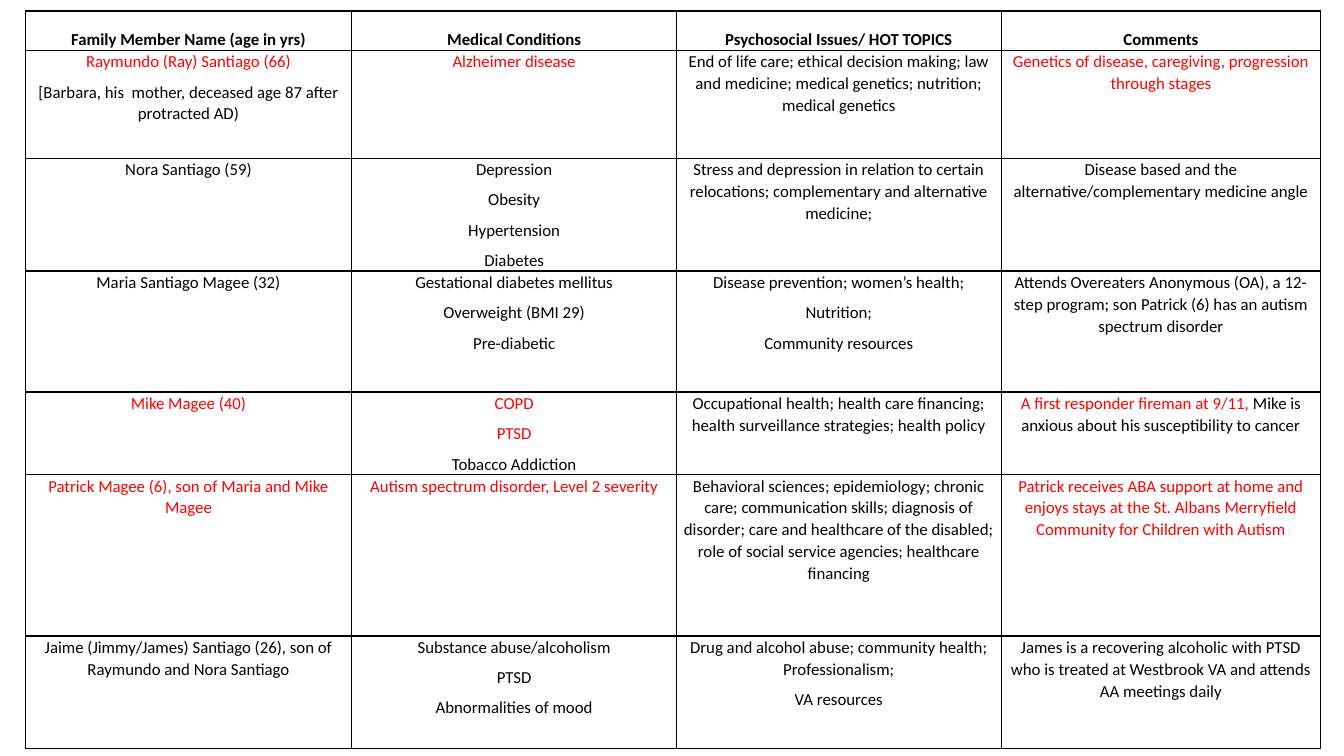
import pptx
import pptx.dml.color
import pptx.enum.text
import pptx.oxml
import pptx.oxml.ns
import pptx.util
import lxml.etree

Inches = pptx.util.Inches
BLACK = "000000"
RED = "FF0000"
WHITE = "FFFFFF"
COLUMN_WIDTHS = [3.24, 3.22, 3.22, 3.17]
ROW_HEIGHTS = [0.39, 1.07, 1.12, 1.2, 0.82, 1.6, 1.12]


def red(text):
    return [(text, RED)]


HEADINGS = [
    "Family Member Name (age in yrs)",
    "Medical Conditions",
    "Psychosocial Issues/ HOT TOPICS",
    "Comments",
]
FAMILY_MEMBERS = [
    [
        [red("Raymundo (Ray) Santiago (66)"),
         "[Barbara, his  mother, deceased age 87 after protracted AD)"],
        [red("Alzheimer disease")],
        ["End of life care; ethical decision making; law and medicine; "
         "medical genetics; nutrition; medical genetics"],
        [red("Genetics of disease, caregiving, progression through stages")],
    ],
    [
        ["Nora Santiago (59)"],
        ["Depression", "Obesity", "Hypertension", "Diabetes"],
        ["Stress and depression in relation to certain relocations; "
         "complementary and alternative medicine;"],
        ["Disease based and the alternative/complementary medicine angle"],
    ],
    [
        ["Maria Santiago Magee (32)"],
        ["Gestational diabetes mellitus", "Overweight (BMI 29)", "Pre-diabetic"],
        ["Disease prevention; women’s health;", "Nutrition;", "Community resources"],
        ["Attends Overeaters Anonymous (OA), a 12-step program; "
         "son Patrick (6) has an autism spectrum disorder"],
    ],
    [
        [red("Mike Magee (40)")],
        [red("COPD"), red("PTSD"), "Tobacco Addiction"],
        ["Occupational health; health care financing; "
         "health surveillance strategies; health policy"],
        [[("A first responder fireman at 9/11,", RED),
          (" Mike is anxious about his susceptibility to cancer", BLACK)]],
    ],
    [
        [red("Patrick Magee (6), son of Maria and Mike Magee")],
        [red("Autism spectrum disorder, Level 2 severity")],
        ["Behavioral sciences; epidemiology; chronic care; communication skills; "
         "diagnosis of disorder; care and healthcare of the disabled; "
         "role of social service agencies; healthcare financing"],
        [red("Patrick receives ABA support at home and enjoys stays at the "
             "St. Albans Merryfield Community for Children with Autism")],
    ],
    [
        ["Jaime (Jimmy/James) Santiago (26), son of Raymundo and Nora Santiago"],
        ["Substance abuse/alcoholism", "PTSD", "Abnormalities of mood"],
        ["Drug and alcohol abuse; community health; Professionalism;", "VA resources"],
        ["James is a recovering alcoholic with PTSD who is treated at "
         "Westbrook VA and attends AA meetings daily"],
    ],
]


def color(value):
    return pptx.dml.color.RGBColor.from_string(value)


def add_borders(cell):
    properties = cell._tc.get_or_add_tcPr()
    for index, side in enumerate(["lnL", "lnR", "lnT", "lnB"]):
        line = pptx.oxml.parse_xml(
            f'<a:{side} {pptx.oxml.ns.nsdecls("a")} w="12700">'
            f'<a:solidFill><a:srgbClr val="{BLACK}"/></a:solidFill></a:{side}>')
        properties.insert(index, line)


def write_paragraph(paragraph, content, bold):
    paragraph.alignment = pptx.enum.text.PP_ALIGN.CENTER
    paragraph.line_spacing = 1.07
    paragraph.space_before = pptx.util.Pt(6)
    runs = [(content, BLACK)] if isinstance(content, str) else content
    for text, text_color in runs:
        run = paragraph.add_run()
        run.text = text
        run.font.name = "Calibri"
        run.font.size = pptx.util.Pt(12)
        run.font.bold = bold
        run.font.color.rgb = color(text_color)


def fill_cell(cell, paragraphs, heading):
    anchor = pptx.enum.text.MSO_ANCHOR
    cell.fill.solid()
    cell.fill.fore_color.rgb = color(WHITE)
    cell.margin_left = cell.margin_right = Inches(0.04)
    cell.margin_top = cell.margin_bottom = 0
    cell.vertical_anchor = anchor.BOTTOM if heading else anchor.TOP
    for index, content in enumerate(paragraphs):
        frame = cell.text_frame
        paragraph = frame.paragraphs[0] if index == 0 else frame.add_paragraph()
        write_paragraph(paragraph, content, heading)
    add_borders(cell)


def add_family_table(slide, left, top, column_widths, row_heights):
    table = slide.shapes.add_table(
        len(row_heights), len(column_widths), Inches(left), Inches(top),
        Inches(sum(column_widths)), Inches(sum(row_heights))).table
    table.first_row = False
    table.horz_banding = False
    for column, width in zip(table.columns, column_widths):
        column.width = Inches(width)
    for row, height in zip(table.rows, row_heights):
        row.height = Inches(height)
    contents = [[[heading] for heading in HEADINGS]] + FAMILY_MEMBERS
    for row_index, row_contents in enumerate(contents):
        for column_index, paragraphs in enumerate(row_contents):
            fill_cell(table.cell(row_index, column_index), paragraphs, row_index == 0)


def main():
    presentation = pptx.Presentation()
    presentation.slide_width = Inches(13.33)
    presentation.slide_height = Inches(7.5)
    slide = presentation.slides.add_slide(presentation.slide_layouts[6])
    add_family_table(slide, 0.25, 0.11, COLUMN_WIDTHS, ROW_HEIGHTS)
    presentation.save("out.pptx")


if __name__ == "__main__":
    main()
